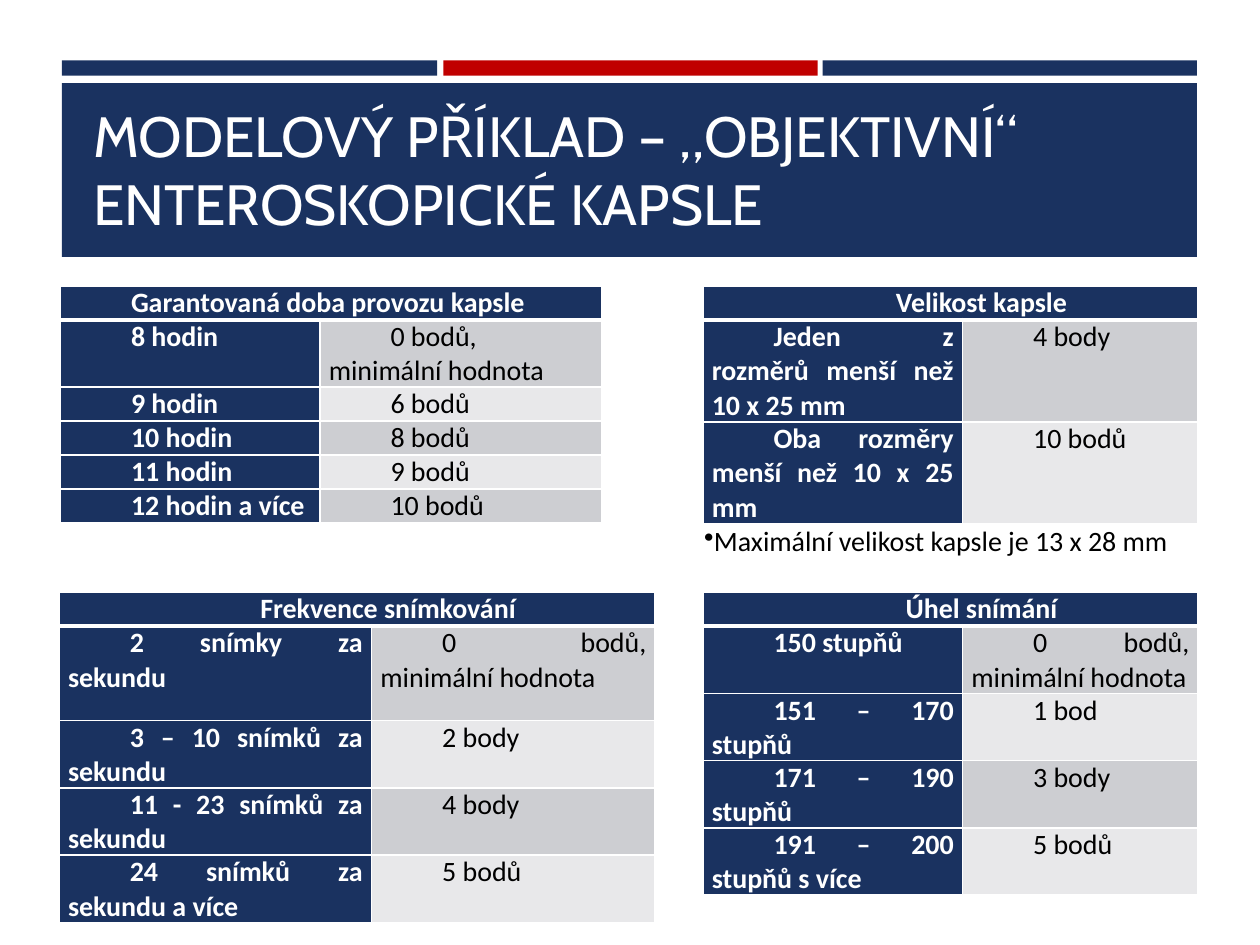
from lxml.etree import SubElement
from pptx import Presentation
from pptx.dml.color import RGBColor
from pptx.enum.shapes import MSO_SHAPE
from pptx.enum.text import MSO_ANCHOR, PP_ALIGN as ALIGN
from pptx.oxml.ns import qn
from pptx.util import Inches, Pt

NAVY, RED, WHITE, BLACK = "1A3260", "C00000", "FFFFFF", "000000"
BANDS = ["CDCED2", "E8E8EA"]

TITLE = "MODELOVÝ PŘÍKLAD – „OBJEKTIVNÍ“\vENTEROSKOPICKÉ KAPSLE"
NOTE = "Maximální velikost kapsle je 13 x 28 mm"

BARS = [  # left, top, width, height, colour
    (0.49, 0.48, 2.98, 0.12, NAVY),
    (3.52, 0.48, 2.97, 0.12, RED),
    (6.53, 0.48, 2.97, 0.12, NAVY),
    (0.49, 0.66, 9.01, 1.38, NAVY),
]

ONE, TWO, THREE = 0.27, 0.53, 0.81  # row heights by number of text lines
TABLES = [  # each row: label, points, height
    {
        "heading": "Garantovaná doba provozu kapsle",
        "at": (0.48, 2.27), "columns": (2.06, 2.24),
        "heading_align": ALIGN.LEFT, "body_align": ALIGN.LEFT,
        "rows": [
            ("8 hodin", "0 bodů, minimální hodnota", TWO),
            ("9 hodin", "6 bodů", ONE),
            ("10 hodin", "8 bodů", ONE),
            ("11 hodin", "9 bodů", ONE),
            ("12 hodin a více", "10 bodů", ONE),
        ],
    },
    {
        "heading": "Velikost kapsle",
        "at": (5.58, 2.27), "columns": (2.06, 1.87),
        "heading_align": ALIGN.CENTER, "body_align": ALIGN.JUSTIFY,
        "rows": [
            ("Jeden z rozměrů menší než 10 x 25 mm", "4 body", THREE),
            ("Oba rozměry menší než 10 x 25 mm", "10 bodů", THREE),
        ],
    },
    {
        "heading": "Úhel snímání",
        "at": (5.58, 4.7), "columns": (2.06, 1.87),
        "heading_align": ALIGN.CENTER, "body_align": ALIGN.JUSTIFY,
        "rows": [
            ("150 stupňů", "0 bodů, minimální hodnota", TWO),
            ("151 – 170 stupňů", "1 bod", TWO),
            ("171 – 190 stupňů", "3 body", TWO),
            ("191 – 200 stupňů s více", "5 bodů", TWO),
        ],
    },
    {
        "heading": "Frekvence snímkování",
        "at": (0.47, 4.7), "columns": (2.48, 2.25),
        "heading_align": ALIGN.CENTER, "body_align": ALIGN.JUSTIFY,
        "rows": [
            ("2 snímky za sekundu", "0 bodů, minimální hodnota", 0.75),
            ("3 – 10 snímků za sekundu", "2 body", TWO),
            ("11 - 23 snímků za sekundu", "4 body", TWO),
            ("24 snímků za sekundu a více", "5 bodů", TWO),
        ],
    },
]

CELL_FORMAT = {
    "margin_left": Inches(0.07), "margin_right": Inches(0.07),
    "margin_top": 0, "margin_bottom": 0, "vertical_anchor": MSO_ANCHOR.TOP,
}


def color(value):
    return RGBColor.from_string(value)


def apply(target, values):
    for name, value in values.items():
        setattr(target, name, value)


def paint(fill, value):
    fill.solid()
    fill.fore_color.rgb = color(value)


def write(frame, text, ink, size=16, name="Calibri", bold=False, align=ALIGN.LEFT):
    para = frame.paragraphs[0]
    para.text = text
    para.alignment = align
    apply(para.font, {"size": Pt(size), "name": name, "bold": bold})
    para.font.color.rgb = color(ink)
    for span in para.runs:
        apply(span.font, {"size": Pt(size), "name": name, "bold": bold})
        span.font.color.rgb = color(ink)
    return para


def add_bar(page, left, top, width, height, value):
    bar = page.shapes.add_shape(
        MSO_SHAPE.RECTANGLE, *map(Inches, (left, top, width, height)))
    bar.shadow.inherit = False
    paint(bar.fill, value)
    bar.line.fill.background()


def add_text(page, left, top, width, height):
    box = page.shapes.add_textbox(*map(Inches, (left, top, width, height)))
    apply(box.text_frame, {"word_wrap": True, "vertical_anchor": MSO_ANCHOR.MIDDLE})
    return box.text_frame


def set_borders(cell, **widths):
    """Draw white borders, 1 pt unless a side (L, R, T, B) is given a width."""
    properties = cell._tc.get_or_add_tcPr()
    for side in "LRTB":
        line = SubElement(properties, qn(f"a:ln{side}"), w=str(Pt(widths.get(side, 1))))
        fill = SubElement(line, qn("a:solidFill"))
        SubElement(fill, qn("a:srgbClr"), val=WHITE)


def fill_cell(cell, text, back, ink, bold, align, **borders):
    apply(cell, CELL_FORMAT)
    set_borders(cell, **borders)
    paint(cell.fill, back)
    para = write(cell.text_frame, text, ink, bold=bold, align=align)
    para.space_after = Pt(6)
    para._p.get_or_add_pPr().set("indent", str(Inches(0.49)))


def add_points_table(page, data):
    heights = [ONE] + [height for _, _, height in data["rows"]]
    columns = data["columns"]
    table = page.shapes.add_table(
        len(heights), len(columns), *map(Inches, data["at"]),
        Inches(sum(columns)), Inches(sum(heights))).table
    for column, width in zip(table.columns, columns):
        column.width = Inches(width)
    for row, height in zip(table.rows, heights):
        row.height = Inches(height)

    heading = table.cell(0, 0)
    heading.merge(table.cell(0, 1))
    fill_cell(heading, data["heading"], NAVY, WHITE, True, data["heading_align"], B=3)
    set_borders(table.cell(0, 1), B=3)

    for index, (label, points, _) in enumerate(data["rows"]):
        top = 3 if index == 0 else 1
        align = data["body_align"]
        fill_cell(table.cell(index + 1, 0), label, NAVY, WHITE, True, align, T=top)
        fill_cell(table.cell(index + 1, 1), points, BANDS[index % 2], BLACK,
                  False, align, T=top)


def main():
    deck = Presentation()
    deck.slide_width, deck.slide_height = Inches(10), Inches(7.5)
    page = deck.slides.add_slide(deck.slide_layouts[6])

    for bar in BARS:
        add_bar(page, *bar)
    write(add_text(page, 0.64, 0.75, 8.74, 1.18), TITLE, WHITE, 32.4, "Cabin")

    for data in TABLES:
        add_points_table(page, data)

    note = write(add_text(page, 5.49, 4.04, 4.1, 0.5), NOTE, BLACK, align=ALIGN.JUSTIFY)
    SubElement(note._p.get_or_add_pPr(), qn("a:buChar"), char="•")

    deck.save("out.pptx")


if __name__ == "__main__":
    main()
